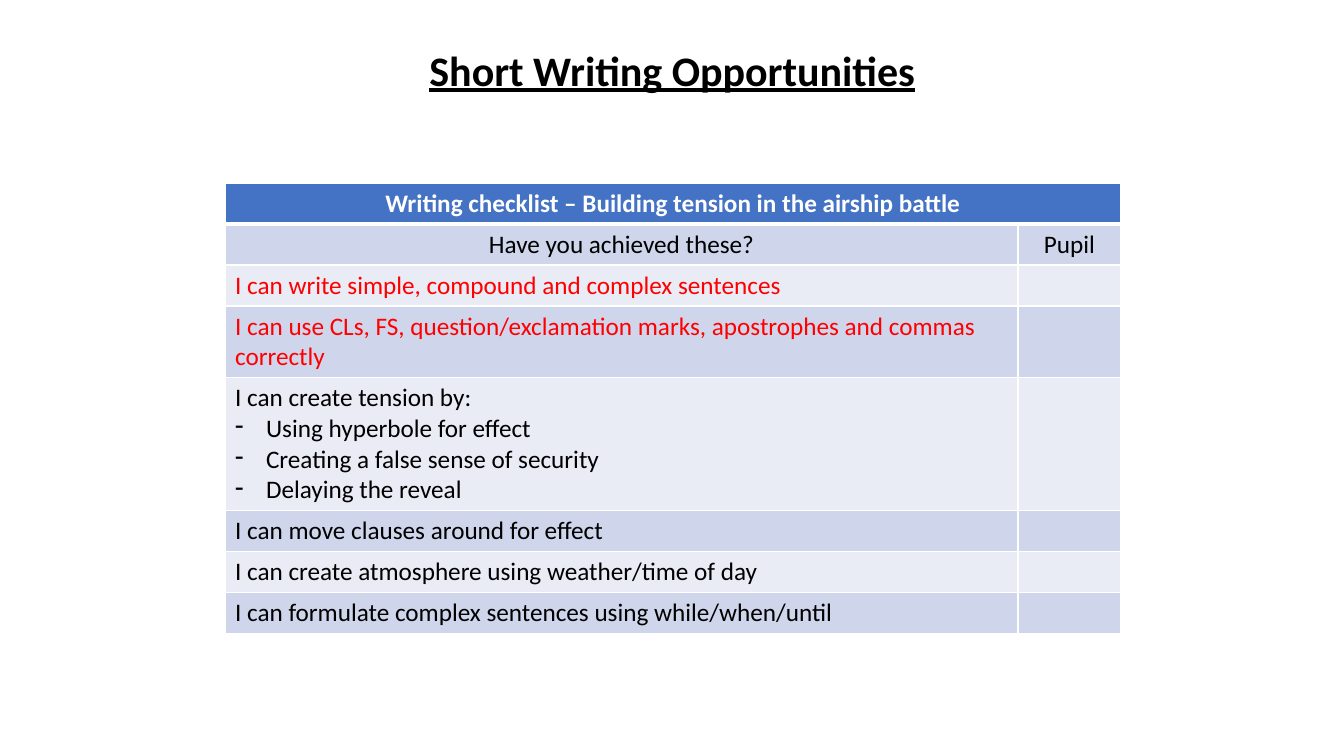
from dataclasses import dataclass

from lxml.etree import SubElement
from pptx import Presentation
from pptx.dml.color import RGBColor
from pptx.enum.text import MSO_ANCHOR, MSO_AUTO_SIZE, PP_ALIGN
from pptx.oxml.ns import qn
from pptx.util import Emu, Pt


@dataclass(frozen=True)
class Theme:
    font: str = "Calibri"
    title_size: int = 30
    table_size: int = 18
    black: str = "000000"
    white: str = "FFFFFF"
    red: str = "FF0000"
    header: str = "4472C4"
    dark_band: str = "CFD5EA"
    light_band: str = "E9EBF5"


THEME = Theme()
EMU_PER_PX = 914400 / 100.8


def px(count):
    return Emu(round(count * EMU_PER_PX))


def add_span(para, text, size, color, bold=False):
    span = para.add_run()
    span.text = text
    span.font.name = THEME.font
    span.font.size = Pt(size)
    span.font.bold = bold
    span.font.color.rgb = RGBColor.from_string(color)
    return span


deck = Presentation()
deck.slide_width, deck.slide_height = px(1344), px(756)
page = deck.slides.add_slide(deck.slide_layouts[5])

# Title
title = page.shapes.title
title.left, title.top, title.width, title.height = px(183), px(39), px(979), px(61)
title.text_frame.auto_size = MSO_AUTO_SIZE.NONE
title.text_frame.word_wrap = True
title.text_frame.vertical_anchor = MSO_ANCHOR.TOP
title_para = title.text_frame.paragraphs[0]
title_para.alignment = PP_ALIGN.CENTER
title_span = add_span(title_para, "Short Writing Opportunities",
                      THEME.title_size, THEME.black, bold=True)
title_span.font.underline = True

# Checklist: row height, text colour, lines for each column
LINE_ROW = 41
checklist = [
    (LINE_ROW, THEME.white, [["Writing checklist – Building tension in the airship battle"], []]),
    (LINE_ROW, THEME.black, [["Have you achieved these?"], ["Pupil"]]),
    (LINE_ROW, THEME.red, [["I can write simple, compound and complex sentences"], []]),
    (71, THEME.red, [["I can use CLs, FS, question/exclamation marks, "
                      "apostrophes and commas correctly"], []]),
    (131, THEME.black, [["I can create tension by:", "Using hyperbole for effect",
                         "Creating a false sense of security", "Delaying the reveal"], []]),
    (LINE_ROW, THEME.black, [["I can move clauses around for effect"], []]),
    (LINE_ROW, THEME.black, [["I can create atmosphere using weather/time of day"], []]),
    (LINE_ROW, THEME.black, [["I can formulate complex sentences using while/when/until"], []]),
]
column_widths = [793, 103]
HEADING_ROWS = 2

frame = page.shapes.add_table(
    len(checklist), len(column_widths), px(225), px(183),
    px(sum(column_widths)), px(sum(height for height, _, _ in checklist)))
table = frame.table
table.horz_banding = False
for column, width in zip(table.columns, column_widths):
    column.width = px(width)

for row_index, (height, color, columns) in enumerate(checklist):
    table.rows[row_index].height = px(height)
    is_header = row_index == 0
    band = THEME.dark_band if row_index % 2 else THEME.light_band
    for column_index, lines in enumerate(columns):
        cell = table.cell(row_index, column_index)

        borders = {"lnL": 1, "lnR": 1, "lnT": 3 if row_index == 1 else 1,
                   "lnB": 3 if is_header else 1}
        properties = cell._tc.get_or_add_tcPr()
        for side, points in borders.items():
            line = SubElement(properties, qn(f"a:{side}"), w=str(Pt(points)))
            line_fill = SubElement(line, qn("a:solidFill"))
            SubElement(line_fill, qn("a:srgbClr"), val=THEME.white)
        cell.fill.solid()
        cell.fill.fore_color.rgb = RGBColor.from_string(THEME.header if is_header else band)

        for line_index, text in enumerate(lines):
            text_frame = cell.text_frame
            para = text_frame.add_paragraph() if line_index else text_frame.paragraphs[0]
            para.alignment = PP_ALIGN.CENTER if row_index < HEADING_ROWS else PP_ALIGN.LEFT
            if line_index:
                bullet = para._p.get_or_add_pPr()
                bullet.set("marL", str(px(31)))
                bullet.set("indent", str(-px(31)))
                SubElement(bullet, qn("a:buChar"), char="-")
            add_span(para, text, THEME.table_size, color, bold=is_header)

table.cell(0, 0).merge(table.cell(0, 1))

deck.save("out.pptx")
